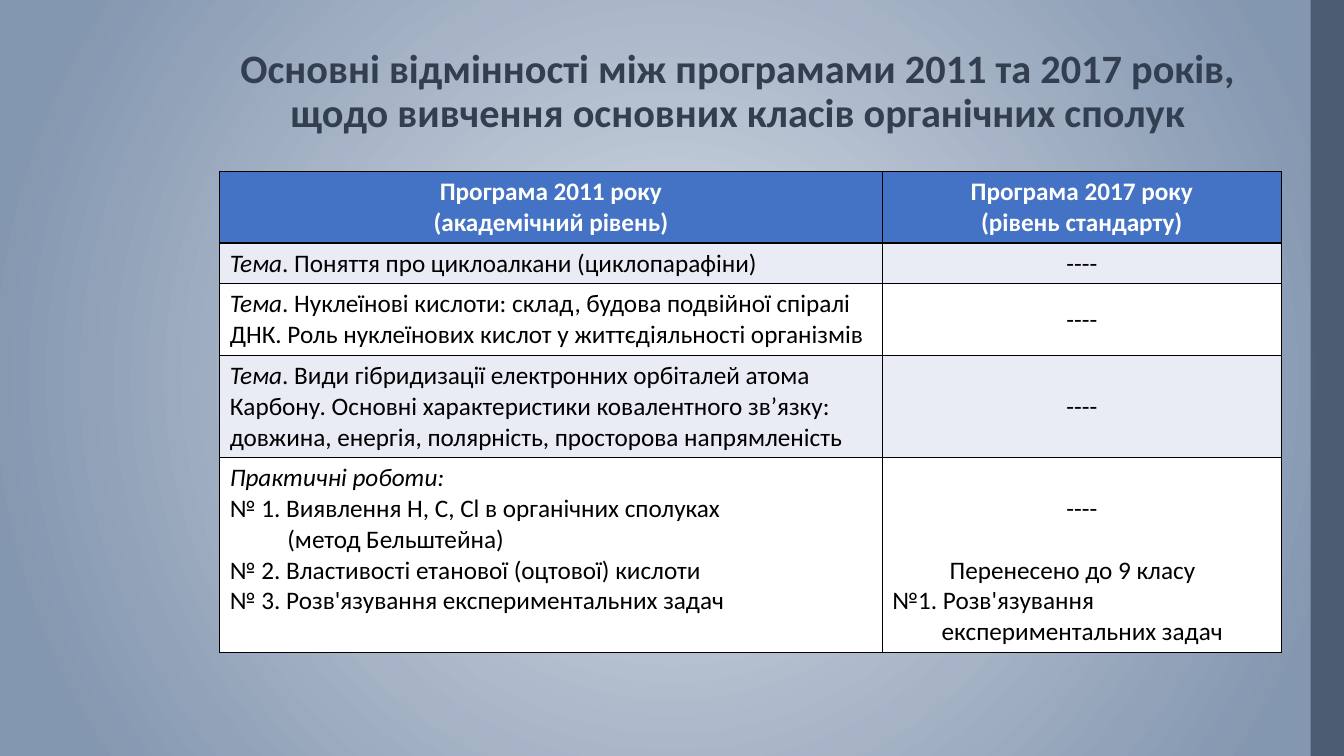
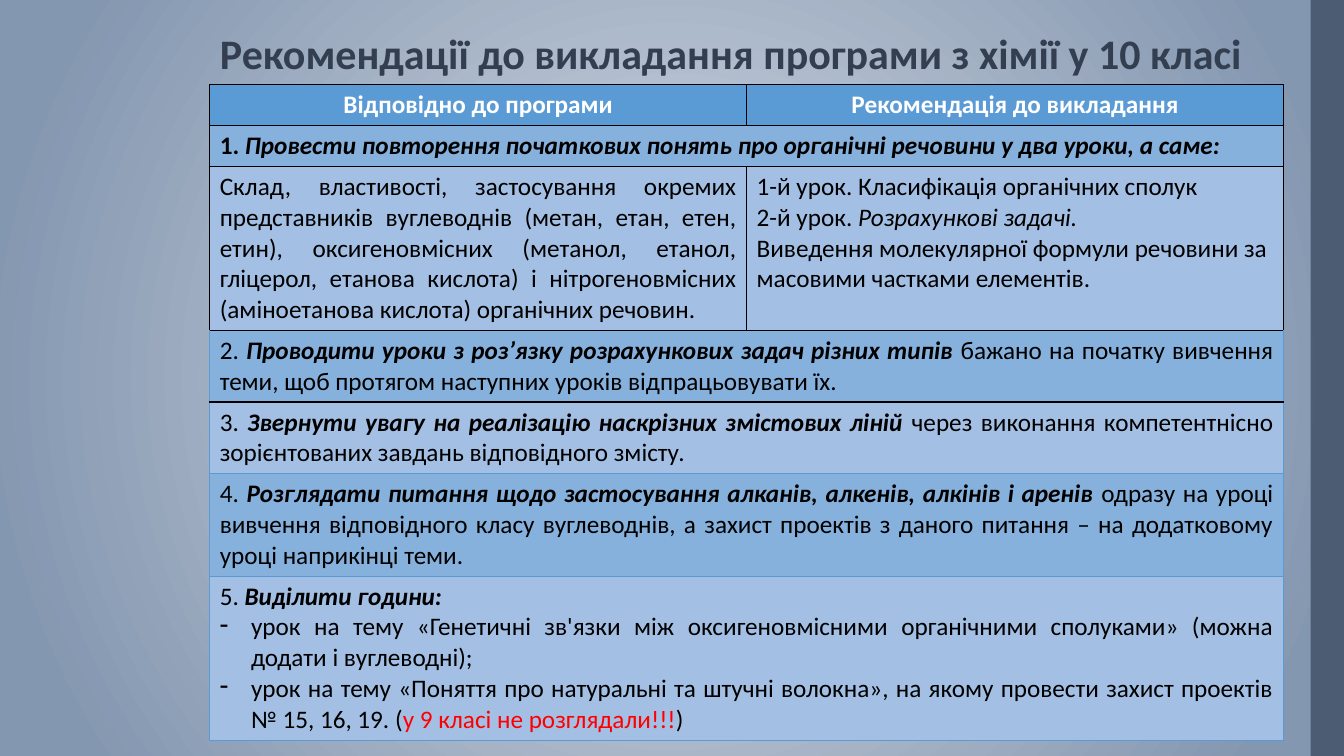
from lxml import etree
from pptx import Presentation
from pptx.dml.color import RGBColor
from pptx.enum.shapes import MSO_SHAPE
from pptx.enum.text import MSO_ANCHOR, MSO_AUTO_SIZE, PP_ALIGN
from pptx.oxml.ns import qn
from pptx.util import Inches, Pt

RECT = MSO_SHAPE.RECTANGLE
TOP, MIDDLE, BOTTOM = MSO_ANCHOR.TOP, MSO_ANCHOR.MIDDLE, MSO_ANCHOR.BOTTOM
LEFT, CENTER, JUSTIFY = PP_ALIGN.LEFT, PP_ALIGN.CENTER, PP_ALIGN.JUSTIFY
NO_FIT = MSO_AUTO_SIZE.NONE

FONT = "Calibri"
W, H = 13.33, 7.5
BAND_W = 0.33
LINE, PAD = 0.305, 0.05
BLACK, WHITE, RED = "000000", "FFFFFF", "FF0000"
NAVY, SLATE = "333F50", "44546A"
INDIGO, PALE = "4472C4", "E9EBF5"
SKY, SKY_MID, SKY_LIGHT = "5B9BD5", "86B1DD", "A3C0E4"
SOLID, THIN = (BLACK, 1), (SKY, 0.5)


def rgb(value):
    return RGBColor.from_string(value)


def sub(parent, tag, **attrs):
    return etree.SubElement(parent, qn(tag), attrs)


def para(*runs, align=LEFT, left=0, hang=0, before=0, bullet=None):
    return dict(runs=runs, align=align, left=left, hang=hang, before=before, bullet=bullet)


def put_text(tf, paras, size=18, color=BLACK, bold=False, spacing=None):
    for n, item in enumerate(paras):
        p = tf.add_paragraph() if n else tf.paragraphs[0]
        p.alignment = item["align"]
        p.space_before = Pt(item["before"])
        if spacing:
            p.line_spacing = spacing
        ppr = p._p.get_or_add_pPr()
        ppr.set("marL", str(Inches(item["left"])))
        ppr.set("indent", str(-Inches(item["hang"])))
        if item["bullet"]:
            sub(ppr, "a:buChar", char=item["bullet"])
        for run in item["runs"]:
            text, style = run if isinstance(run, tuple) else (run, "")
            r = p.add_run()
            r.text = text
            r.font.name, r.font.size = FONT, Pt(size)
            r.font.bold = bold or "b" in style
            r.font.italic = "i" in style
            r.font.color.rgb = rgb(RED if "r" in style else color)


def set_background(master):
    fill = master.background.fill
    fill.gradient()
    for stop, (color, pos) in zip(fill.gradient_stops, (("D6DCE5", 0), ("8497B0", 0.9))):
        stop.color.rgb, stop.position = rgb(color), pos
    grad = master.element.find(".//" + qn("p:bg")).find(".//" + qn("a:gradFill"))
    grad.remove(grad.find(qn("a:lin")))
    circle = sub(grad, "a:path", path="circle")
    sub(circle, "a:fillToRect", l="50000", t="50000", r="50000", b="50000")


def move_band_to_master(s, master):
    band = s.shapes.add_shape(RECT, Inches(W - BAND_W), 0, Inches(BAND_W), Inches(H))
    band.shadow.inherit = False
    band.fill.solid()
    band.fill.fore_color.rgb = rgb(SLATE)
    band.line.fill.background()
    sub(band.element.find(".//" + qn("a:srgbClr")), "a:alpha", val="87000")
    master.shapes.element.insert(2, band.element)


def add_title(s, box, text, size, align):
    sp = s.shapes.title
    sp.left, sp.top, sp.width, sp.height = map(Inches, box)
    tf = sp.text_frame
    tf.word_wrap, tf.auto_size, tf.vertical_anchor = True, NO_FIT, BOTTOM
    put_text(tf, [para(text, align=align)], size=size, color=NAVY, bold=True, spacing=0.9)


def set_borders(cell, **edges):
    tcpr = cell._tc.get_or_add_tcPr()
    for n, side in enumerate("LRTB"):
        color, width = edges[side]
        ln = etree.Element(qn("a:ln" + side), w=str(Pt(width)))
        sub(sub(ln, "a:solidFill"), "a:srgbClr", val=color)
        tcpr.insert(n, ln)


def add_grid(s, left, top, widths, rows):
    heights = [LINE * row["lines"] + 2 * PAD for row in rows]
    frame = s.shapes.add_table(len(rows), len(widths), Inches(left), Inches(top),
                               Inches(sum(widths)), Inches(sum(heights)))
    table = frame.table
    table.first_row = table.horz_banding = False
    for col, width in zip(table.columns, widths):
        col.width = Inches(width)
    above = SOLID
    for i, row in enumerate(rows):
        table.rows[i].height = Inches(heights[i])
        side, below = row.get("side", SOLID), row.get("below", SOLID)
        for j in range(len(widths)):
            cell = table.cell(i, j)
            cell.fill.solid()
            cell.fill.fore_color.rgb = rgb(row["fill"])
            set_borders(cell, L=side, R=side, T=above, B=below)
        above = below
        if len(row["cells"]) < len(widths):
            table.cell(i, 0).merge(table.cell(i, len(widths) - 1))
        for j, paras in enumerate(row["cells"]):
            put_text(table.cell(i, j).text_frame, paras, color=WHITE if i == 0 else BLACK,
                     bold=i == 0)
    return table


def differences_slide(s):
    add_title(s, (2.14, 0.36, 10.36, 1.04),
              "Основні відмінності між програмами 2011 та 2017 років, "
              "щодо вивчення основних класів органічних сполук", 28.8, CENTER)
    dash = [para("----", align=CENTER)]
    topics = [
        (1, PALE, ". Поняття про циклоалкани (циклопарафіни)"),
        (2, WHITE, ". Нуклеїнові кислоти: склад, будова подвійної спіралі ДНК. "
                   "Роль нуклеїнових кислот у життєдіяльності організмів"),
        (3, PALE, ". Види гібридизації електронних орбіталей атома Карбону. "
                  "Основні характеристики ковалентного зв’язку: довжина, енергія, "
                  "полярність, просторова напрямленість"),
    ]
    practical = [
        para(("Практичні роботи:", "i")),
        para("№ 1. Виявлення Н, С, Сl в органічних сполуках"),
        para("(метод Бельштейна)", left=0.57),
        para("№ 2. Властивості етанової (оцтової) кислоти"),
        para("№ 3. Розв'язування експериментальних задач"),
    ]
    moved = [
        *dash,
        para("Перенесено до 9 класу", left=0.57, before=LINE * 72),
        para("№1. Розв'язування експериментальних задач", left=0.49, hang=0.49),
    ]
    header = [[para(line, align=CENTER) for line in lines] for lines in (
        ("Програма 2011 року", "(академічний рівень)"),
        ("Програма 2017 року", "(рівень стандарту)"))]
    rows = [dict(lines=2, fill=INDIGO, cells=header)]
    rows += [dict(lines=n, fill=fill, cells=[[para(("Тема", "i"), text)], dash])
             for n, fill, text in topics]
    rows.append(dict(lines=6, fill=WHITE, cells=[practical, moved]))
    table = add_grid(s, 2.18, 1.7, (6.57, 3.96), rows)
    for i in range(len(rows) - 1):
        for j in range(2):
            table.cell(i, j).vertical_anchor = MIDDLE
    last = table.cell(len(rows) - 1, 1)
    last.vertical_anchor = TOP
    last.margin_top = Inches(PAD + LINE)


def recommendations_slide(s):
    add_title(s, (2.08, 0.19, 10.96, 0.64),
              "Рекомендації до викладання програми з хімії у 10 класі", 30, LEFT)
    review = [
        [para("Склад, властивості, застосування окремих представників вуглеводнів "
              "(метан, етан, етен, етин), оксигеновмісних (метанол, етанол, гліцерол, "
              "етанова кислота) і нітрогеновмісних (аміноетанова кислота) "
              "органічних речовин.", align=JUSTIFY)],
        [para("1-й урок. Класифікація органічних сполук"),
         para("2-й урок. ", ("Розрахункові задачі.", "i")),
         para("Виведення молекулярної формули речовини за масовими частками елементів.")],
    ]
    tasks = para("2. ", ("Проводити уроки з роз’язку розрахункових задач різних типів", "bi"),
                 " бажано на початку вивчення теми, щоб протягом наступних уроків "
                 "відпрацьовувати їх.", align=JUSTIFY)
    themes = para("3. ", ("Звернути увагу на реалізацію наскрізних змістових ліній", "bi"),
                  " через виконання компетентнісно зорієнтованих завдань "
                  "відповідного змісту.", align=JUSTIFY)
    usage = para("4. ", ("Розглядати питання щодо застосування алканів, алкенів, "
                         "алкінів і аренів ", "bi"),
                 "одразу на уроці вивчення відповідного класу вуглеводнів, а захист "
                 "проектів з даного питання – на додатковому уроці наприкінці теми.",
                 align=JUSTIFY)
    item = dict(align=JUSTIFY, left=0.31, hang=0.31, bullet="-")
    hours = [
        para("5. ", ("Виділити години:", "bi"), align=JUSTIFY),
        para("урок на тему «Генетичні зв'язки між оксигеновмісними органічними "
             "сполуками» (можна додати і вуглеводні);", **item),
        para("урок на тему «Поняття про натуральні та штучні волокна», на якому "
             "провести захист проектів № 15, 16, 19. (",
             ("у 9 класі не розглядали!!!", "r"), ")", **item),
    ]
    header = [[para(text, align=CENTER)] for text in
              ("Відповідно до програми", "Рекомендація до викладання")]
    start = para(("1. ", "b"), ("Провести повторення початкових понять про органічні "
                                "речовини у два уроки, а саме:", "bi"))
    rows = [
        dict(lines=1, fill=SKY, cells=header),
        dict(lines=1, fill=SKY_MID, cells=[[start]]),
        dict(lines=5, fill=SKY_LIGHT, cells=review),
        dict(lines=2, fill=SKY_MID, cells=[[tasks]], side=THIN),
        dict(lines=2, fill=SKY_LIGHT, cells=[[themes]], side=THIN, below=THIN),
        dict(lines=3, fill=SKY_MID, cells=[[usage]], side=THIN, below=THIN),
        dict(lines=5, fill=SKY_LIGHT, cells=[hours], side=THIN, below=THIN),
    ]
    add_grid(s, 2.08, 0.84, (5.325, 5.325), rows)


def main():
    prs = Presentation()
    prs.slide_width, prs.slide_height = Inches(W), Inches(H)
    set_background(prs.slide_master)
    slides = [prs.slides.add_slide(prs.slide_layouts[5]) for _ in range(2)]
    move_band_to_master(slides[0], prs.slide_master)
    differences_slide(slides[0])
    recommendations_slide(slides[1])
    prs.save("out.pptx")


if __name__ == "__main__":
    main()
